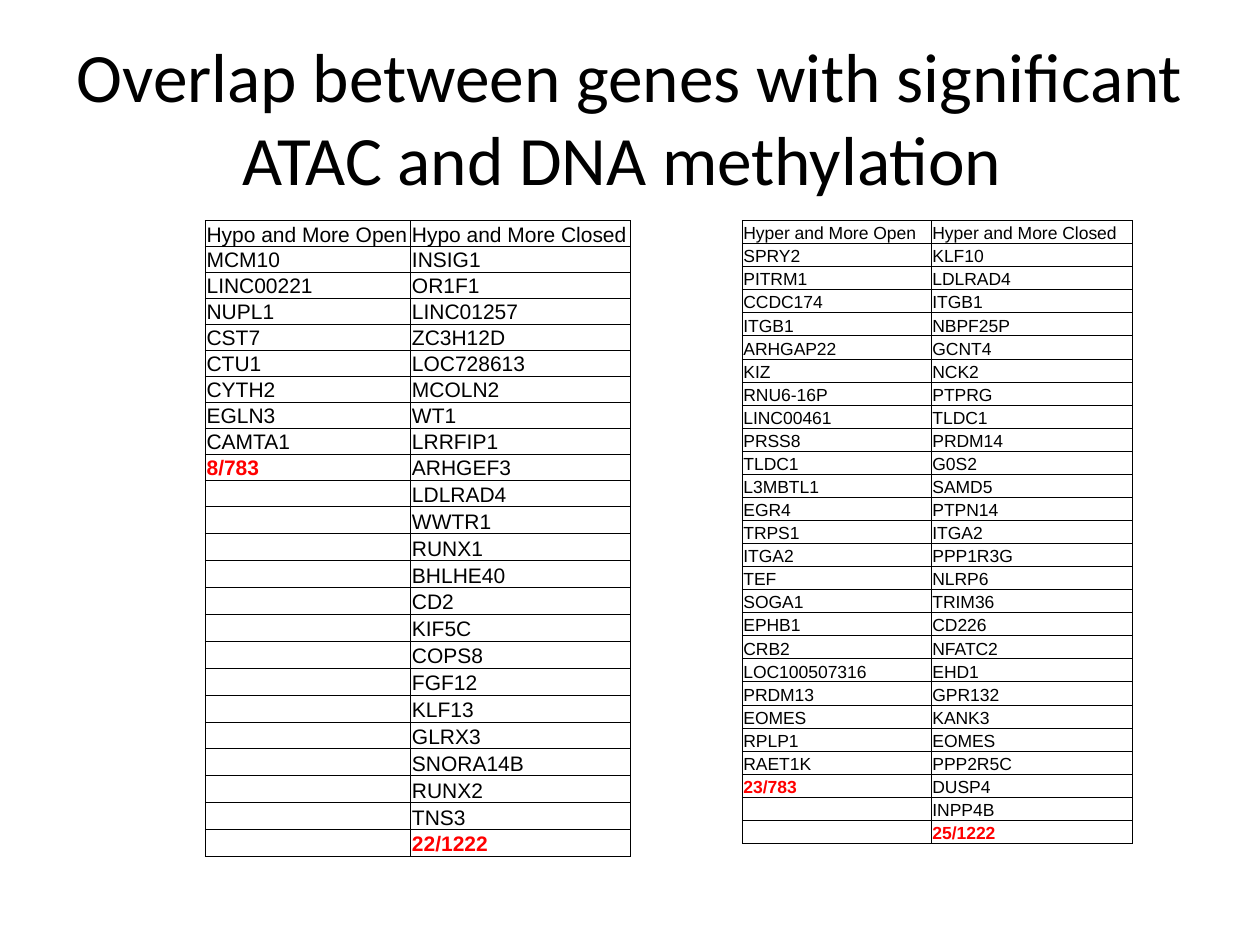
from itertools import zip_longest

from lxml.etree import SubElement
from pptx import Presentation
from pptx.dml.color import RGBColor
from pptx.enum.text import MSO_ANCHOR as Anchor, MSO_AUTO_SIZE as AutoSize, PP_ALIGN as Align
from pptx.oxml.ns import qn
from pptx.util import Inches, Pt

BLACK = RGBColor(0x00, 0x00, 0x00)
RED = RGBColor(0xFF, 0x00, 0x00)

HYPO_OPEN = "MCM10 LINC00221 NUPL1 CST7 CTU1 CYTH2 EGLN3 CAMTA1 8/783"
HYPO_CLOSED = """INSIG1 OR1F1 LINC01257 ZC3H12D LOC728613 MCOLN2 WT1 LRRFIP1
    ARHGEF3 LDLRAD4 WWTR1 RUNX1 BHLHE40 CD2 KIF5C COPS8 FGF12 KLF13 GLRX3
    SNORA14B RUNX2 TNS3 22/1222"""
HYPER_OPEN = """SPRY2 PITRM1 CCDC174 ITGB1 ARHGAP22 KIZ RNU6-16P LINC00461 PRSS8
    TLDC1 L3MBTL1 EGR4 TRPS1 ITGA2 TEF SOGA1 EPHB1 CRB2 LOC100507316 PRDM13
    EOMES RPLP1 RAET1K 23/783"""
HYPER_CLOSED = """KLF10 LDLRAD4 ITGB1 NBPF25P GCNT4 NCK2 PTPRG TLDC1 PRDM14 G0S2
    SAMD5 PTPN14 ITGA2 PPP1R3G NLRP6 TRIM36 CD226 NFATC2 EHD1 GPR132 KANK3
    EOMES PPP2R5C DUSP4 INPP4B 25/1222"""

# Left edge, column widths, text size, then header and genes of each column
GENE_TABLES = [
    (5.89, (1.5, 1.6), 10,
     {"Hyper and More Open": HYPER_OPEN, "Hyper and More Closed": HYPER_CLOSED}),
    (1.63, (1.63, 1.74), 12,
     {"Hypo and More Open": HYPO_OPEN, "Hypo and More Closed": HYPO_CLOSED}),
]
CELL_FORMAT = {
    "vertical_anchor": Anchor.BOTTOM,
    "margin_left": Inches(0.01),
    "margin_top": Inches(0.01),
    "margin_right": Inches(0.01),
    "margin_bottom": 0,
}


def set_format(target, values):
    for name, value in values.items():
        setattr(target, name, value)


def add_borders(cell):
    properties = cell._tc.get_or_add_tcPr()
    for side in ("a:lnL", "a:lnR", "a:lnT", "a:lnB"):
        line = SubElement(properties, qn(side), w=str(Pt(0.5)))
        fill = SubElement(line, qn("a:solidFill"))
        SubElement(fill, qn("a:srgbClr"), val=str(BLACK))


deck = Presentation()
deck.slide_width, deck.slide_height = Inches(10), Inches(7.5)
slide = deck.slides.add_slide(deck.slide_layouts[5])

# Title
title = slide.shapes.title
set_format(title, {
    "left": int(deck.slide_width * 0.05),
    "top": int(deck.slide_height * 0.04),
    "width": int(deck.slide_width * 0.9),
    "height": Inches(1.25),
})
heading = title.text_frame
heading.text = "Overlap between genes with significant ATAC and DNA methylation "
set_format(heading, {"vertical_anchor": Anchor.MIDDLE, "auto_size": AutoSize.NONE})
heading.paragraphs[0].alignment = Align.CENTER
heading_font = heading.paragraphs[0].runs[0].font
set_format(heading_font, {"name": "Calibri", "size": Pt(39.6)})
heading_font.color.rgb = BLACK

# Gene tables, both filling the same height
tables_top, tables_height = Inches(1.75), Inches(4.95)
for left, widths, size, genes in GENE_TABLES:
    columns = [[header, *names.split()] for header, names in genes.items()]
    rows = list(zip_longest(*columns, fillvalue=""))
    table = slide.shapes.add_table(
        len(rows), len(widths), Inches(left), tables_top,
        Inches(sum(widths)), tables_height).table
    set_format(table, {"first_row": False, "horz_banding": False})
    for column, width in zip(table.columns, widths):
        column.width = Inches(width)
    for row, entries in zip(table.rows, rows):
        row.height = tables_height // len(rows)
        for cell, entry in zip(row.cells, entries):
            set_format(cell, CELL_FORMAT)
            add_borders(cell)
            cell.fill.background()
            paragraph = cell.text_frame.paragraphs[0]
            if not entry:
                # Small end mark keeps the empty row low
                SubElement(paragraph._p, qn("a:endParaRPr"), sz=str(size * 100))
                continue
            is_count = "/" in entry
            run = paragraph.add_run()
            run.text = entry
            set_format(run.font, {"name": "Arial", "size": Pt(size), "bold": is_count})
            run.font.color.rgb = RED if is_count else BLACK

deck.save("out.pptx")
